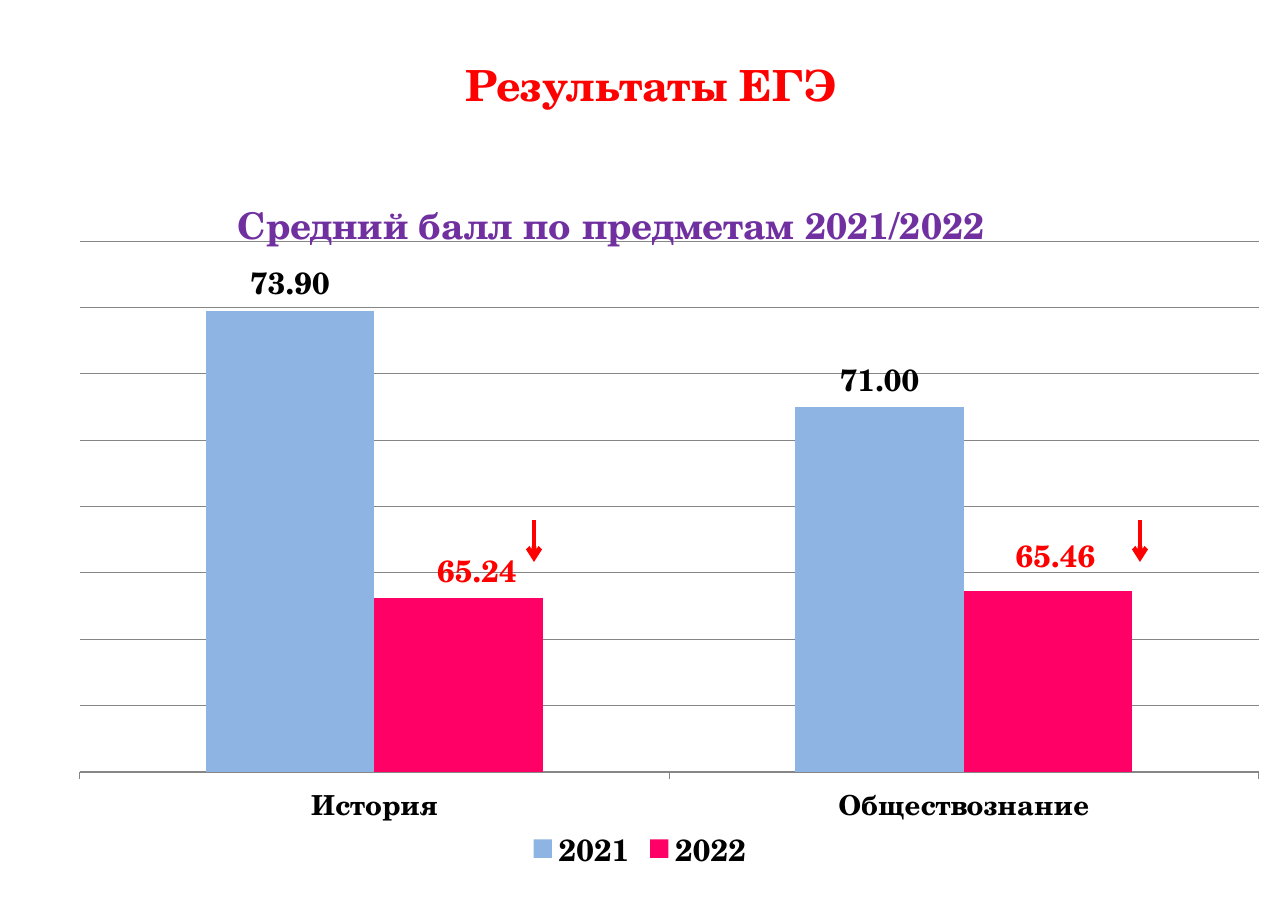
import pptx
import pptx.chart.data
import pptx.dml.color
import pptx.enum.chart
import pptx.enum.shapes
import pptx.enum.text
import pptx.oxml
import pptx.oxml.ns
import pptx.util

PX = 914400 / 110.2
FONT = "TeX Gyre Schola"
COLORS = {
    "red": "FF0000",
    "purple": "7030A0",
    "black": "000000",
    "blue": "8EB4E3",
    "pink": "FF0066",
    "grid": "868686",
}
SUBJECTS = ["История", "Обществознание"]
SCORES = [
    ("2021", (73.9, 71), "blue", "black", "#,##0.00"),
    ("2022", (65.24, 65.46), "pink", "red", "0.00"),
]
LABEL_SHIFTS = [(18, 0), (7, -8)]
CHART_BOX = (20, 116, 1240, 763)


def px(length):
    return pptx.util.Emu(round(length * PX))


def rgb(name):
    return pptx.dml.color.RGBColor.from_string(COLORS[name])


def format_font(font, size, color):
    font.name = FONT
    font.size = pptx.util.Pt(size)
    font.bold = True
    font.color.rgb = rgb(color)


def set_layout(parent, index, **settings):
    layout = parent.find(pptx.oxml.ns.qn("c:layout"))
    if layout is not None:
        parent.remove(layout)
    items = "".join(f'<c:{key} val="{value}"/>' for key, value in settings.items())
    parent.insert(index, pptx.oxml.parse_xml(
        f'<c:layout {pptx.oxml.ns.nsdecls("c")}>'
        f"<c:manualLayout>{items}</c:manualLayout></c:layout>"))


def add_heading(slide, text):
    heading = slide.shapes.title
    heading.left, heading.top, heading.width, heading.height = map(px, (7, 0, 1288, 169))
    frame = heading.text_frame
    frame.text = text
    frame.vertical_anchor = pptx.enum.text.MSO_ANCHOR.MIDDLE
    frame.paragraphs[0].alignment = pptx.enum.text.PP_ALIGN.CENTER
    format_font(frame.paragraphs[0].runs[0].font, 28, "red")


def format_chart_title(chart, text):
    chart.has_title = True
    frame = chart.chart_title.text_frame
    frame.text = text
    format_font(frame.paragraphs[0].runs[0].font, 24, "purple")
    set_layout(chart.chart_title._element, 1, xMode="edge", yMode="edge", x=0.17, y=0.09)


def format_axes(chart):
    scores = chart.value_axis
    scores.minimum_scale, scores.maximum_scale, scores.major_unit = 60, 76, 2
    scores.visible = False
    scores.has_major_gridlines = True
    subjects = chart.category_axis
    subjects.major_tick_mark = pptx.enum.chart.XL_TICK_MARK.OUTSIDE
    format_font(subjects.tick_labels.font, 18, "black")
    for line in (scores.major_gridlines.format.line, subjects.format.line):
        line.color.rgb = rgb("grid")
        line.width = pptx.util.Pt(0.75)


def format_labels(labels, color, number_format):
    labels.show_value = True
    labels.number_format = number_format
    labels.number_format_is_linked = False
    labels.position = pptx.enum.chart.XL_LABEL_POSITION.OUTSIDE_END
    format_font(labels.font, 20, color)


def shift_labels(series, color, number_format):
    for index in range(len(LABEL_SHIFTS)):
        label = series.points[index].data_label
        format_font(label.font, 20, color)
        label.position = pptx.enum.chart.XL_LABEL_POSITION.OUTSIDE_END
    for element, (dx, dy) in zip(series._element.xpath(".//c:dLbl"), LABEL_SHIFTS):
        set_layout(element, 1, x=round(dx / CHART_BOX[2], 3), y=round(dy / CHART_BOX[3], 3))
        element.insert(2, pptx.oxml.parse_xml(
            f'<c:numFmt {pptx.oxml.ns.nsdecls("c")} '
            f'formatCode="{number_format}" sourceLinked="0"/>'))


def add_score_chart(slide):
    data = pptx.chart.data.CategoryChartData()
    data.categories = SUBJECTS
    for year, values, *_ in SCORES:
        data.add_series(year, values)
    chart = slide.shapes.add_chart(
        pptx.enum.chart.XL_CHART_TYPE.COLUMN_CLUSTERED, *map(px, CHART_BOX), data).chart
    chart.font.name = "Calibri"
    chart.font.size = pptx.util.Pt(18)
    format_chart_title(chart, "Средний балл по предметам 2021/2022")
    format_axes(chart)
    plot = chart.plots[0]
    plot.gap_width, plot.overlap, plot.vary_by_categories = 150, 0, False
    for series, (_, _, fill, label_color, number_format) in zip(plot.series, SCORES):
        series.format.fill.solid()
        series.format.fill.fore_color.rgb = rgb(fill)
        format_labels(series.data_labels, label_color, number_format)
    shift_labels(plot.series[1], *SCORES[1][3:])
    chart.has_legend = True
    chart.legend.position = pptx.enum.chart.XL_LEGEND_POSITION.BOTTOM
    chart.legend.include_in_layout = False
    format_font(chart.legend.font, 20, "black")
    plot_area = chart._chartSpace.xpath(".//c:plotArea")[0]
    set_layout(plot_area, 0, layoutTarget="inner", xMode="edge", yMode="edge",
               x=0.048, y=0.164, w=0.951, h=0.696)


def add_down_arrow(slide, x):
    arrow = slide.shapes.add_connector(
        pptx.enum.shapes.MSO_CONNECTOR.STRAIGHT, px(x), px(520), px(x), px(562))
    arrow.line.color.rgb = rgb("red")
    arrow.line.width = pptx.util.Pt(3)
    namespace = pptx.oxml.ns.nsdecls("a")
    arrow.line._get_or_add_ln().append(
        pptx.oxml.parse_xml(f'<a:tailEnd {namespace} type="arrow"/>'))
    arrow._element.spPr.append(pptx.oxml.parse_xml(f"<a:effectLst {namespace}/>"))


def main():
    deck = pptx.Presentation()
    deck.slide_width, deck.slide_height = px(1288), px(910)
    slide = deck.slides.add_slide(deck.slide_layouts[5])
    add_heading(slide, "Результаты ЕГЭ")
    add_score_chart(slide)
    for x in (534, 1140):
        add_down_arrow(slide, x)
    deck.save("out.pptx")


if __name__ == "__main__":
    main()
